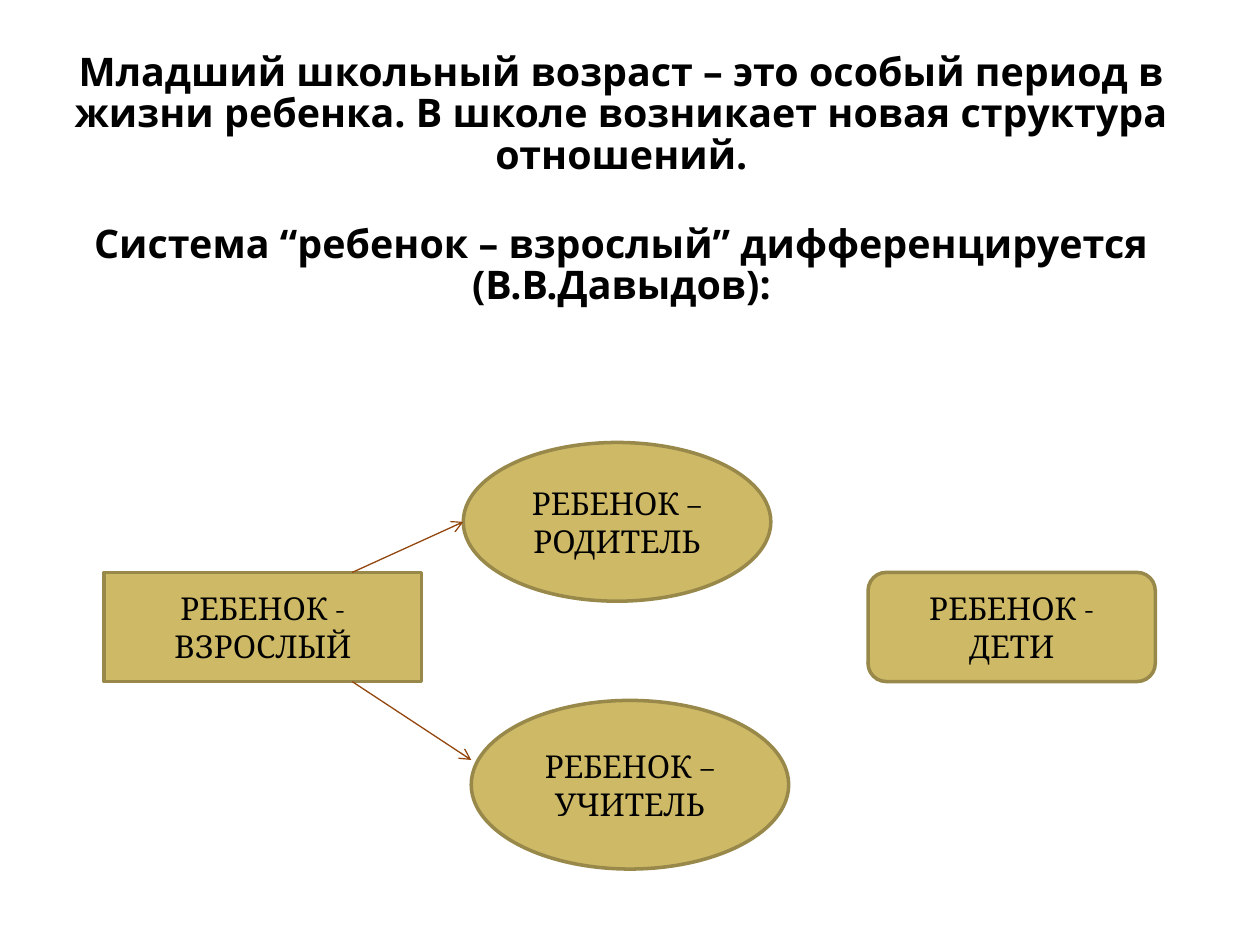
from lxml.etree import SubElement
from pptx import Presentation
from pptx.dml.color import RGBColor
from pptx.enum.shapes import MSO_CONNECTOR, MSO_SHAPE
from pptx.enum.text import MSO_ANCHOR, MSO_AUTO_SIZE, PP_ALIGN
from pptx.oxml.ns import qn
from pptx.util import Cm, Pt


def color(value):
    return RGBColor.from_string(value)


def apply(target, values):
    for name, value in values.items():
        setattr(target, name, value)


def write(shape, lines, font, paragraph):
    tf = shape.text_frame
    apply(tf, {"word_wrap": True, "auto_size": MSO_AUTO_SIZE.NONE,
               "vertical_anchor": MSO_ANCHOR.MIDDLE})
    tf.text = "\n".join(lines)
    for p in tf.paragraphs:
        apply(p, {"alignment": PP_ALIGN.CENTER, **paragraph})
        for r in p.runs:
            apply(r.font, font)
            r.font.color.rgb = color("000000")


def add_title(s, left, top, width, height):
    title = s.shapes.title
    apply(title, {"left": Cm(left), "top": Cm(top),
                  "width": Cm(width), "height": Cm(height)})
    lines = [
        "Младший школьный возраст – это особый период в жизни ребенка. "
        "В школе возникает новая структура отношений.",
        "Система “ребенок – взрослый” дифференцируется (В.В.Давыдов):",
    ]
    write(title, lines, {"name": "Open Sans", "size": Pt(22.5), "bold": True},
          {"line_spacing": 0.88, "space_before": Pt(0)})
    title.text_frame.paragraphs[1].space_before = Pt(27)


def add_node(s, kind, lines, left, top, width, height):
    sp = s.shapes.add_shape(kind, Cm(left), Cm(top), Cm(width), Cm(height))
    sp.shadow.inherit = False
    sp.fill.solid()
    sp.fill.fore_color.rgb = color("CEB966")
    sp.line.color.rgb = color("98894B")
    sp.line.width = Pt(2)
    write(sp, lines, {"name": "Cambria", "size": Pt(18)}, {})


def add_arrow(s, x1, y1, x2, y2):
    line = s.shapes.add_connector(MSO_CONNECTOR.STRAIGHT,
                                  Cm(x1), Cm(y1), Cm(x2), Cm(y2))
    line.line.color.rgb = color("93460D")
    line.line.width = Pt(0.75)
    SubElement(line.line._get_or_add_ln(), qn("a:tailEnd"), type="arrow")
    SubElement(line._element.spPr, qn("a:effectLst"))


def add_diagram(s, left, top):
    nodes = [
        (MSO_SHAPE.RECTANGLE, ["РЕБЕНОК - ВЗРОСЛЫЙ"], 0, 2.62, 6.4, 2.2),
        (MSO_SHAPE.ROUNDED_RECTANGLE, ["РЕБЕНОК - ДЕТИ"], 15.4, 2.62, 5.79, 2.2),
        (MSO_SHAPE.OVAL, ["РЕБЕНОК –", "РОДИТЕЛЬ"], 7.24, 0, 6.2, 3.2),
        (MSO_SHAPE.OVAL, ["РЕБЕНОК –", "УЧИТЕЛЬ"], 7.4, 5.2, 6.4, 3.4),
    ]
    for kind, lines, x, y, width, height in nodes:
        add_node(s, kind, lines, left + x, top + y, width, height)
    for x1, y1, x2, y2 in [(5, 2.62, 7.24, 1.6), (5, 4.82, 7.4, 6.4)]:
        add_arrow(s, left + x1, top + y1, left + x2, top + y2)


def main():
    prs = Presentation()
    prs.slide_width, prs.slide_height = Cm(25.4), Cm(19.05)
    s = prs.slides.add_slide(prs.slide_layouts[5])
    s.background.fill.solid()
    s.background.fill.fore_color.rgb = color("FFFFFF")
    add_title(s, 1.1, 0.74, 22.86, 5.8)
    add_diagram(s, 2.1, 8.92)
    prs.save("out.pptx")


if __name__ == "__main__":
    main()
